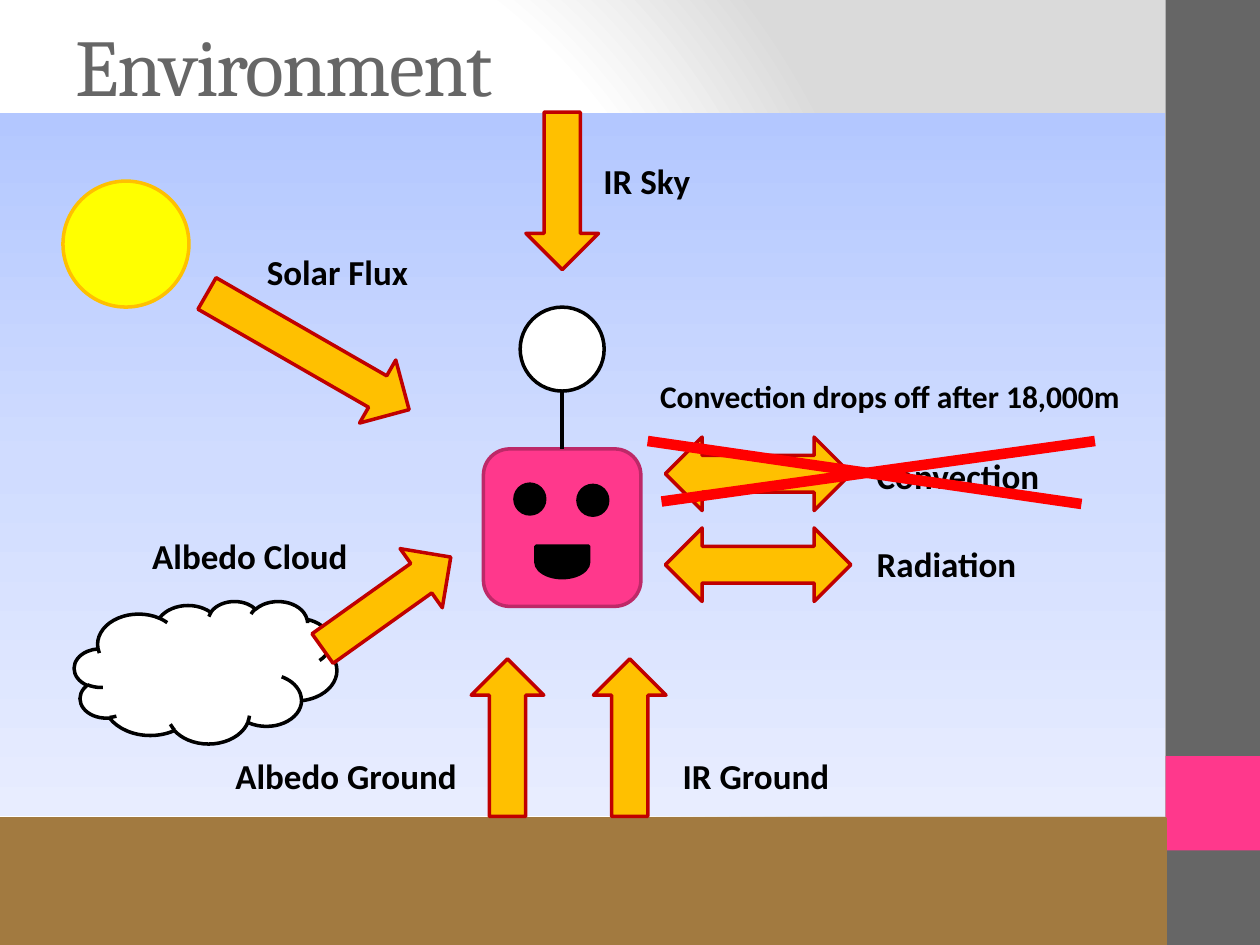
from lxml.etree import SubElement
from pptx import Presentation
from pptx.dml.color import RGBColor
from pptx.enum.shapes import MSO_CONNECTOR, MSO_SHAPE
from pptx.enum.text import MSO_ANCHOR, MSO_AUTO_SIZE
from pptx.oxml.ns import qn
from pptx.util import Pt


def color(hex_string):
    return RGBColor.from_string(hex_string)


def set_gradient(fill, owner, stops, direction, **settings):
    """Fill with (percent, colour) stops along a "lin" or "path" direction."""
    fill.gradient()
    gradient = next(owner.iter(qn("a:gradFill")))
    for child in list(gradient):
        gradient.remove(child)
    stop_list = SubElement(gradient, qn("a:gsLst"))
    for percent, hex_string in stops:
        stop = SubElement(stop_list, qn("a:gs"), pos=str(percent * 1000))
        SubElement(stop, qn("a:srgbClr"), val=hex_string)
    return SubElement(gradient, qn(f"a:{direction}"), **settings)


class SlidePainter:
    GRAY, PINK, BLACK, WHITE = "666666", "FF388C", "000000", "FFFFFF"
    GOLD, DARK_RED, RED, BROWN = "FFC000", "C00000", "FF0000", "A27A40"
    HEADING_FONT, BODY_FONT = "Cambria", "Calibri"

    def __init__(self, slide):
        self.slide = slide

    def backdrop(self):
        stops = [(0, self.WHITE), (75, self.WHITE), (100, "DADADA")]
        radial = set_gradient(self.slide.background.fill, self.slide.element,
                              stops, "path", path="circle")
        SubElement(radial, qn("a:fillToRect"),
                   l="20000", t="50000", r="100000", b="50000")

    def shape(self, kind, left, top, width, height, fill=None, line=None, rotation=0):
        shape = self.slide.shapes.add_shape(
            kind, Pt(left), Pt(top), Pt(width), Pt(height))
        shape.shadow.inherit = False
        shape.rotation = rotation
        if fill:
            shape.fill.solid()
            shape.fill.fore_color.rgb = color(fill)
        if line:
            shape.line.color.rgb = color(line)
            shape.line.width = Pt(2)
        else:
            shape.line.fill.background()
        return shape

    def sky(self, left, top, width, height):
        sky = self.shape(MSO_SHAPE.RECTANGLE, left, top, width, height)
        stops = [(0, "B3C7FF"), (50, "D0DCFF"), (100, "E8EDFF")]
        set_gradient(sky.fill, sky.element, stops, "lin", ang="5400000", scaled="0")

    def up_arrow(self, left, top, height=90, rotation=0):
        self.shape(MSO_SHAPE.UP_ARROW, left, top, 41.5, height,
                   self.GOLD, self.DARK_RED, rotation)

    def exchange_arrow(self, left, top):
        self.shape(MSO_SHAPE.LEFT_RIGHT_ARROW, left, top, 106, 42,
                   self.GOLD, self.DARK_RED)

    def line(self, start, end, hex_string, width):
        line = self.slide.shapes.add_connector(
            MSO_CONNECTOR.STRAIGHT, *map(Pt, start + end))
        line.line.color.rgb = color(hex_string)
        line.line.width = Pt(width)
        SubElement(line.element.spPr, qn("a:effectLst"))
        return line

    def text(self, words, left, top, width, height, size, font, hex_string):
        box = self.slide.shapes.add_textbox(Pt(left), Pt(top), Pt(width), Pt(height))
        para = box.text_frame.paragraphs[0]
        span = para.add_run()
        span.text = words
        para.font.name = font
        para.font.size = Pt(size)
        para.font.color.rgb = color(hex_string)
        return box

    def title(self, words):
        box = self.text(words, 36, 8.6, 600, 56.2, 46, self.HEADING_FONT, self.GRAY)
        box.text_frame.word_wrap = True
        box.text_frame.vertical_anchor = MSO_ANCHOR.MIDDLE
        span = box.text_frame.paragraphs[0].runs[0]
        span.font._element.set("spc", "-100")

    def label(self, words, left, top, width, size=20):
        box = self.text(words, left, top, width, size * 1.58, size,
                        self.BODY_FONT, self.BLACK)
        box.text_frame.word_wrap = False
        box.text_frame.auto_size = MSO_AUTO_SIZE.SHAPE_TO_FIT_TEXT
        box.text_frame.paragraphs[0].font.bold = True


def draw_setting(painter):
    painter.backdrop()
    painter.shape(MSO_SHAPE.RECTANGLE, 666, 0, 54, 540, painter.GRAY)
    painter.shape(MSO_SHAPE.RECTANGLE, 666, 432, 54, 54, painter.PINK)
    painter.title("Environment")
    painter.shape(MSO_SHAPE.RECTANGLE, 0, 468, 666, 72, painter.BROWN, painter.BROWN)
    painter.sky(0, 64.4, 666, 402)
    painter.shape(MSO_SHAPE.OVAL, 36, 103.5, 72, 72, "FFFF00", painter.GOLD)
    painter.shape(MSO_SHAPE.CLOUD, 42.5, 343.5, 150, 81.4, painter.WHITE, painter.BLACK)


def draw_balloon_robot(painter):
    black = painter.BLACK
    body = painter.shape(MSO_SHAPE.ROUNDED_RECTANGLE, 276.25, 256.5, 90, 90,
                         painter.PINK, "BD2968")
    for left, top in ((294.3, 276.7), (330.3, 277.4)):
        painter.shape(MSO_SHAPE.OVAL, left, top, 17, 17, black, black)
    painter.shape(MSO_SHAPE.FLOWCHART_DELAY, 312.3, 306, 18, 30.2, black, black, 90)
    painter.shape(MSO_SHAPE.OVAL, 297.25, 175.5, 48, 48, painter.WHITE, black)
    string = painter.line((321.25, 223.5), (321.25, 256.5), black, 2.25)
    string.end_connect(body, 0)


def draw_heat_flows(painter):
    for left in (269.3, 339.1):
        painter.up_arrow(left, 376.5)
    painter.up_arrow(200.2, 299.5, rotation=54.5)
    painter.up_arrow(155.3, 134.3, height=133.2, rotation=119.9)
    painter.up_arrow(300.5, 64.1, rotation=180)
    for top in (249.8, 301.7):
        painter.exchange_arrow(380.2, top)

    for words, left, top, width in (
        ("Solar Flux", 145.4, 139.7, 95.8),
        ("IR Sky", 337.7, 87.8, 64.8),
        ("Albedo Cloud", 79.9, 301.7, 131.8),
        ("Albedo Ground", 127.4, 427.7, 146.9),
        ("IR Ground", 383, 427.7, 99.4),
        ("Convection", 493.9, 256.3, 108),
        ("Radiation", 493.9, 306.7, 95),
    ):
        painter.label(words, left, top, width)

    painter.line((370.1, 252), (618, 288), painter.RED, 6)
    painter.line((378, 286.6), (625.7, 252), painter.RED, 6)
    painter.label("Convection drops off after 18,000m", 370.1, 211.7, 280.8, size=18)


def main():
    deck = Presentation()
    deck.slide_width, deck.slide_height = Pt(720), Pt(540)
    painter = SlidePainter(deck.slides.add_slide(deck.slide_layouts[6]))
    draw_setting(painter)
    draw_balloon_robot(painter)
    draw_heat_flows(painter)
    deck.save("out.pptx")


if __name__ == "__main__":
    main()
